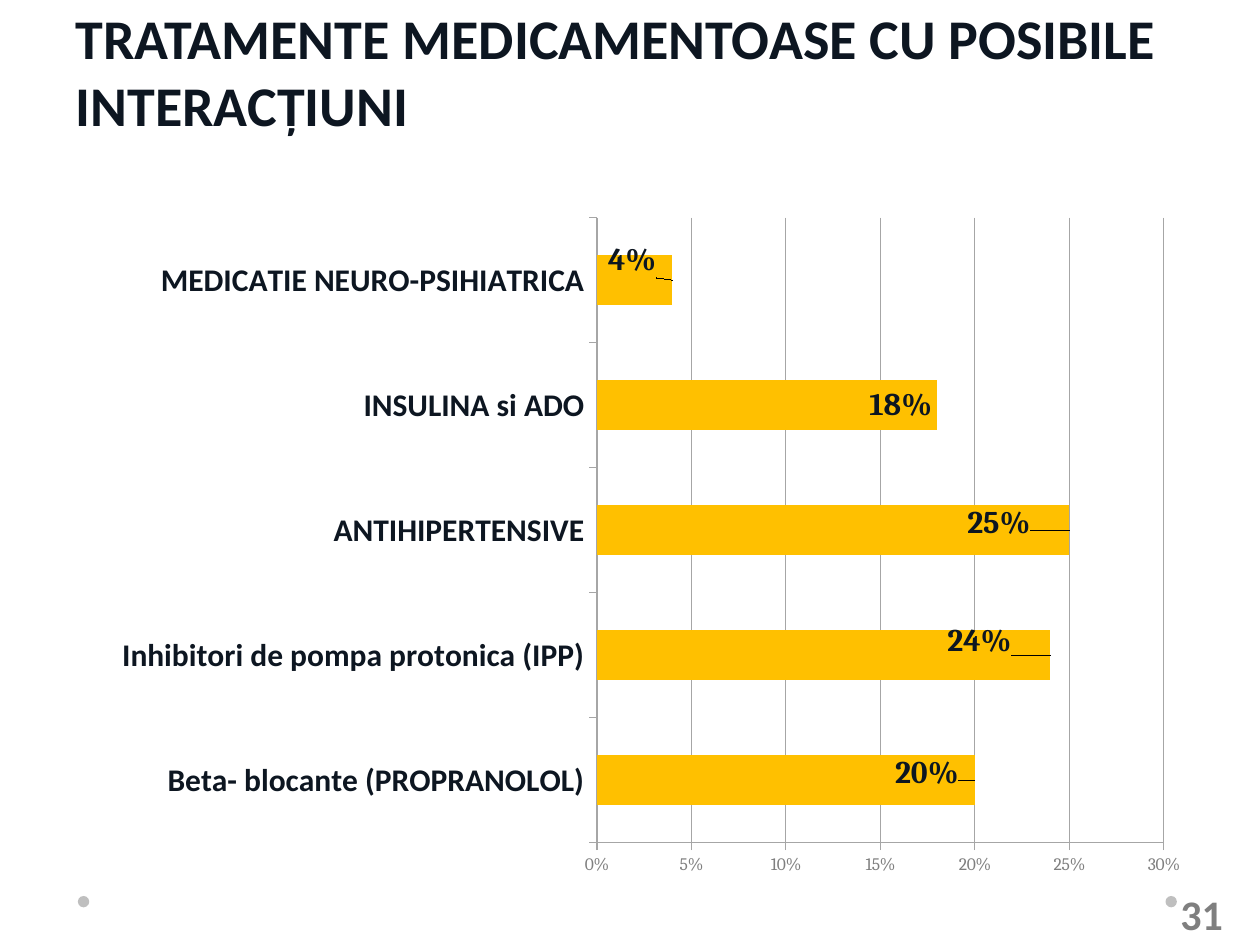
from lxml import etree
from pptx import Presentation
from pptx.chart import data as chart_data
from pptx.dml import color
from pptx.enum import chart as ce, shapes, text
from pptx.oxml import ns
from pptx.util import Pt

INK, GREY, DOT, RULE, AMBER = "0D1621", "7F7F7F", "BFBFBF", "A6A6A6", "FFC000"
TREATMENTS = [
    ("Beta- blocante (PROPRANOLOL)", 0.20, (-0.01, -0.01)),
    ("Inhibitori de pompa protonica (IPP)", 0.24, (-0.03, -0.02)),
    ("ANTIHIPERTENSIVE", 0.25, (-0.03, -0.01)),
    ("INSULINA si ADO", 0.18, (0, 0)),
    ("MEDICATIE NEURO-PSIHIATRICA", 0.04, (-0.01, -0.03)),
]


def rgb(value):
    """Return the colour for a hex string."""
    return color.RGBColor.from_string(value)


def style_font(font, name, size, tint, bold=False):
    """Set face, size, colour and weight of a font."""
    font.name, font.size, font.bold = name, Pt(size), bold
    font.color.rgb = rgb(tint)


def style_line(line, tint):
    """Make a line thin and solid."""
    line.color.rgb = rgb(tint)
    line.width = Pt(0.75)


def place(shape, box):
    """Move a shape into a box given in points."""
    shape.left, shape.top, shape.width, shape.height = map(Pt, box)


def write(shape, wording, size, tint):
    """Write one bold, left-aligned line of text, centred vertically."""
    frame = shape.text_frame
    frame.word_wrap = True
    frame.auto_size = text.MSO_AUTO_SIZE.NONE
    frame.vertical_anchor = text.MSO_ANCHOR.MIDDLE
    para = frame.paragraphs[0]
    para.alignment = text.PP_ALIGN.LEFT
    span = para.add_run()
    span.text = wording
    style_font(span.font, "Calibri", size, tint, True)
    return frame


def add_title(page, box):
    """Fill the title placeholder."""
    title = page.shapes.title
    place(title, box)
    write(title, "TRATAMENTE MEDICAMENTOASE CU POSIBILE INTERACȚIUNI", 32, INK)


def add_layout(parent, index, **fractions):
    """Insert a manual layout into a chart element."""
    layout = etree.Element(ns.qn("c:layout"))
    manual = etree.SubElement(layout, ns.qn("c:manualLayout"))
    for tag, value in fractions.items():
        etree.SubElement(manual, ns.qn(f"c:{tag}")).set("val", str(value))
    parent.insert(index, layout)


def style_axes(chart):
    """Format the treatment axis and the percentage axis."""
    names, shares = chart.category_axis, chart.value_axis
    style_font(names.tick_labels.font, "Calibri", 18, INK, True)
    style_font(shares.tick_labels.font, "Cambria", 10, GREY)
    shares.minimum_scale, shares.maximum_scale, shares.major_unit = 0, 0.3, 0.05
    shares.tick_labels.number_format = "0%"
    shares.tick_labels.number_format_is_linked = False
    names.has_major_gridlines, shares.has_major_gridlines = False, True
    style_line(shares.major_gridlines.format.line, RULE)
    for axis in (names, shares):
        axis.major_tick_mark = ce.XL_TICK_MARK.OUTSIDE
        style_line(axis.format.line, RULE)


def style_labels(plot, series):
    """Show bold percentages near the bar ends, each with its own shift."""
    plot.has_data_labels = True
    general = series.data_labels
    general.show_value = True
    general.number_format, general.number_format_is_linked = "0%", False
    general.position = ce.XL_LABEL_POSITION.INSIDE_END
    style_font(general.font, "Cambria", 18, INK, True)
    for index in range(len(TREATMENTS)):
        label = series.points[index].data_label
        style_font(label.font, "Cambria", 18, INK, True)
        label.position = ce.XL_LABEL_POSITION.INSIDE_END
    for element, (_, _, (x, y)) in zip(series._element.iter(ns.qn("c:dLbl")), TREATMENTS):
        add_layout(element, 1, x=x, y=y)


def add_bars(page, box):
    """Add the bar chart of treatments."""
    source = chart_data.CategoryChartData(number_format="0%")
    source.categories = [name for name, _, _ in TREATMENTS]
    source.add_series("Series 1", [share for _, share, _ in TREATMENTS])
    chart = page.shapes.add_chart(
        ce.XL_CHART_TYPE.BAR_CLUSTERED, *map(Pt, box), source).chart
    chart.has_legend = chart.has_title = False
    style_font(chart.font, "Cambria", 10, GREY)
    plot = chart.plots[0]
    plot.gap_width, plot.vary_by_categories = 150, False
    series = plot.series[0]
    series.format.fill.solid()
    series.format.fill.fore_color.rgb = rgb(AMBER)
    style_axes(chart)
    style_labels(plot, series)
    area = chart._chartSpace.find(".//" + ns.qn("c:plotArea"))
    for old in area.findall(ns.qn("c:layout")):
        area.remove(old)
    add_layout(area, 0, layoutTarget="inner", xMode="edge", yMode="edge",
               x=0.47, y=0.02, w=0.5, h=0.91)


def add_footer(page, box):
    """Add the two dots and the page number along the bottom."""
    left, top, width, height = box
    for dot_left in (left, left + 621.5):
        dot = page.shapes.add_shape(
            shapes.MSO_SHAPE.OVAL, *map(Pt, (dot_left, top + 4.5, 6.5, 6.5)))
        dot.shadow.inherit = False
        dot.fill.solid()
        dot.fill.fore_color.rgb = rgb(DOT)
        dot.line.fill.background()
    number_width = 44
    number = page.shapes.add_textbox(
        *map(Pt, (left + width - number_width, top, number_width, height)))
    frame = write(number, "31", 24, GREY)
    frame.margin_left = Pt(2)
    frame.margin_right = frame.margin_top = frame.margin_bottom = Pt(3.6)


def main():
    """Build and save the slide."""
    deck = Presentation()
    deck.slide_width, deck.slide_height = Pt(720), Pt(540)
    page = deck.slides.add_slide(deck.slide_layouts[5])
    add_title(page, (36, -2, 648, 85))
    add_bars(page, (36.5, 116.5, 648, 392.5))
    add_footer(page, (44.5, 507.5, 672, 29))
    deck.save("out.pptx")


if __name__ == "__main__":
    main()
